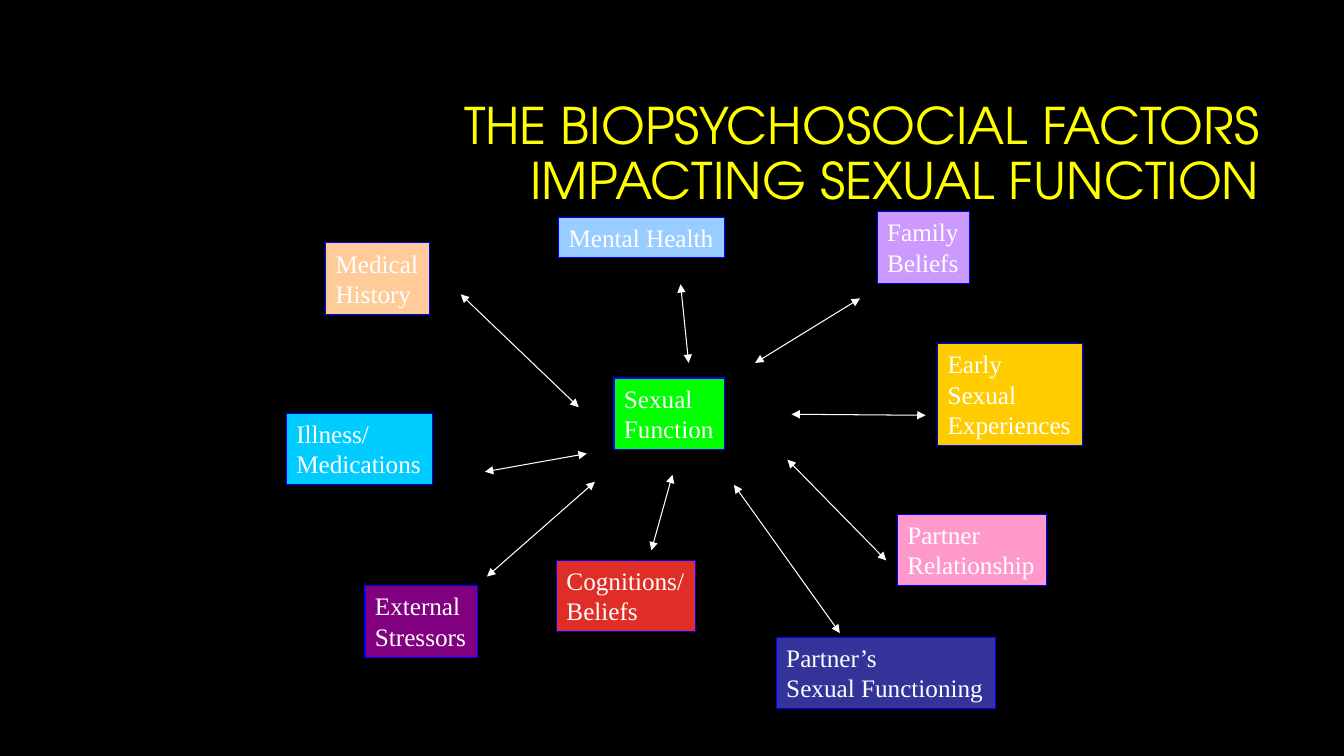
from lxml import etree
from pptx import Presentation
from pptx.dml.color import RGBColor
from pptx.enum.shapes import MSO_CONNECTOR, MSO_SHAPE
from pptx.enum.text import MSO_ANCHOR, MSO_AUTO_SIZE, PP_ALIGN
from pptx.oxml.ns import qn
from pptx.util import Pt

BLACK = RGBColor(0x00, 0x00, 0x00)
WHITE = RGBColor(0xFF, 0xFF, 0xFF)
YELLOW = RGBColor(0xFF, 0xFF, 0x00)
BLUE = RGBColor(0x00, 0x00, 0xFF)
GREEN = RGBColor(0x00, 0xFF, 0x00)
PEACH = RGBColor(0xFF, 0xCC, 0x99)
CYAN = RGBColor(0x00, 0xCC, 0xFF)
PURPLE = RGBColor(0x80, 0x00, 0x80)
RED = RGBColor(0xDF, 0x2E, 0x28)
PINK = RGBColor(0xFF, 0x99, 0xCC)
GOLD = RGBColor(0xFF, 0xCC, 0x00)
LILAC = RGBColor(0xCC, 0x99, 0xFF)
SKY = RGBColor(0x99, 0xCC, 0xFF)
INDIGO = RGBColor(0x33, 0x33, 0x99)

TITLE = "THE BIOPSYCHOSOCIAL FACTORS IMPACTING SEXUAL FUNCTION"
TITLE_BOX = (317, 84, 942, 141)
TITLE_FONT = "TeX Gyre Adventor"
BODY_FONT = "Times New Roman"

FACTORS = [
    ("Sexual\nFunction", 609, 375, 110, GREEN),
    ("Medical\nHistory", 323, 241, 103, PEACH),
    ("Illness/\nMedications", 284, 410, 145, CYAN),
    ("External\nStressors", 362, 581, 112, PURPLE),
    ("Cognitions/\nBeliefs", 552, 556, 138, RED),
    ("Partner\nRelationship", 890, 510, 148, PINK),
    ("Early\nSexual\nExperiences", 930, 341, 144, GOLD),
    ("Family\nBeliefs", 870, 210, 92, LILAC),
    ("Mental Health", 554, 216, 165, SKY),
    ("Partner’s\nSexual Functioning", 770, 632, 217, INDIGO),
]

ARROWS = [
    (457, 292, 574, 404),
    (481, 468, 582, 450),
    (918, 412, 785, 411),
    (675, 282, 683, 360),
    (853, 296, 749, 360),
    (781, 456, 879, 556),
    (646, 546, 667, 471),
    (483, 572, 590, 478),
    (728, 481, 833, 628),
]

PX = 9144
LINE_HEIGHT = 30.3
PADDING = 10


def px(*lengths):
    return [round(length * PX) for length in lengths]


def style_font(font, name, size, color):
    font.name = name
    font.size = Pt(size)
    font.color.rgb = color


def add_title(slide):
    title = slide.shapes.title
    title.left, title.top, title.width, title.height = px(*TITLE_BOX)
    frame = title.text_frame
    frame.text = TITLE
    frame.word_wrap = True
    frame.auto_size = MSO_AUTO_SIZE.NONE
    frame.vertical_anchor = MSO_ANCHOR.MIDDLE
    paragraph = frame.paragraphs[0]
    paragraph.alignment = PP_ALIGN.RIGHT
    paragraph.line_spacing = 0.9
    style_font(paragraph.runs[0].font, TITLE_FONT, 36, YELLOW)


def add_factor(slide, text, left, top, width, color):
    height = round(PADDING + LINE_HEIGHT * len(text.split("\n")))
    shape = slide.shapes.add_shape(MSO_SHAPE.RECTANGLE, *px(left, top, width, height))
    shape.shadow.inherit = False
    shape.fill.solid()
    shape.fill.fore_color.rgb = color
    shape.line.color.rgb = BLUE
    shape.line.width = Pt(0.75)
    frame = shape.text_frame
    frame.text = text
    frame.word_wrap = False
    frame.auto_size = MSO_AUTO_SIZE.SHAPE_TO_FIT_TEXT
    frame.vertical_anchor = MSO_ANCHOR.TOP
    for paragraph in frame.paragraphs:
        paragraph.alignment = PP_ALIGN.LEFT
        style_font(paragraph.runs[0].font, BODY_FONT, 18, WHITE)


def add_arrow(slide, ends):
    connector = slide.shapes.add_connector(MSO_CONNECTOR.STRAIGHT, *px(*ends))
    connector.line.color.rgb = WHITE
    connector.line.width = Pt(0.75)
    line = connector.line._get_or_add_ln()
    for tag in ("a:headEnd", "a:tailEnd"):
        etree.SubElement(line, qn(tag), type="triangle")
    etree.SubElement(connector._element.spPr, qn("a:effectLst"))


def main():
    presentation = Presentation()
    presentation.slide_width, presentation.slide_height = px(1333, 750)
    slide = presentation.slides.add_slide(presentation.slide_layouts[5])
    slide.background.fill.solid()
    slide.background.fill.fore_color.rgb = BLACK
    add_title(slide)
    for factor in FACTORS:
        add_factor(slide, *factor)
    for ends in ARROWS:
        add_arrow(slide, ends)
    presentation.save("out.pptx")


if __name__ == "__main__":
    main()
